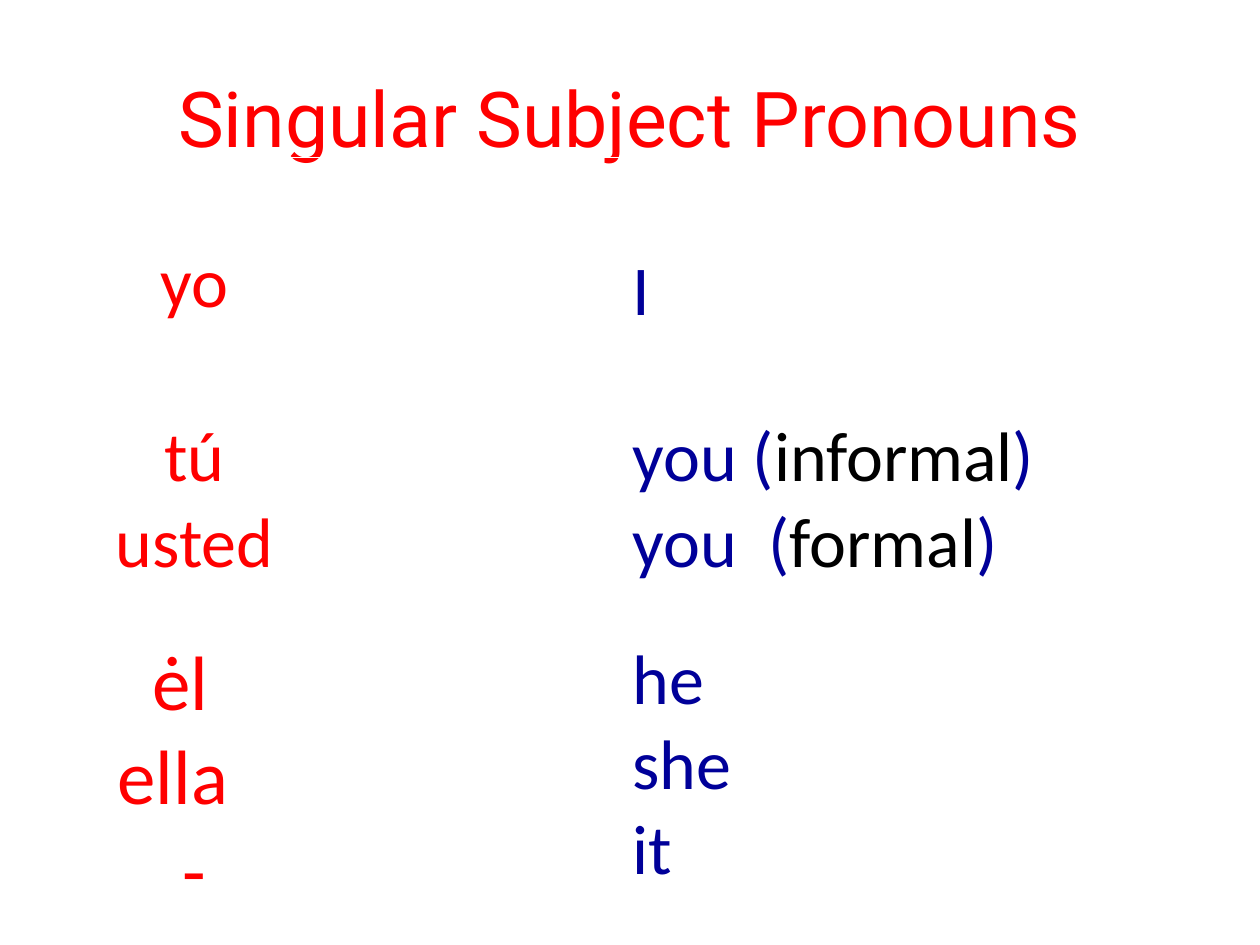
from pptx import Presentation
from pptx.dml.color import RGBColor
from pptx.enum.text import MSO_ANCHOR, PP_ALIGN
from pptx.util import Pt

RED = RGBColor(0xFF, 0x00, 0x00)
BLUE = RGBColor(0x00, 0x00, 0x99)
BLACK = RGBColor(0x00, 0x00, 0x00)

CENTER, LEFT = PP_ALIGN.CENTER, PP_ALIGN.LEFT

prs = Presentation()
prs.slide_width, prs.slide_height = Pt(720), Pt(540)
s = prs.slides.add_slide(prs.slide_layouts[5])

title = s.shapes.title
title.left, title.top, title.width, title.height = Pt(36), Pt(21.6), Pt(648), Pt(90)
tf = title.text_frame
tf.text = "Singular Subject Pronouns"
tf.vertical_anchor = MSO_ANCHOR.MIDDLE
p = tf.paragraphs[0]
p.alignment = CENTER
p.font.size = Pt(44)
p.font.name = "Roboto"
p.font.color.rgb = RED

COLUMN_WIDTHS = [162, 162, 306, 18]
ROW_HEIGHTS = [121.7, 149, 211.7]
table = s.shapes.add_table(3, 4, Pt(30.24), Pt(90), Pt(648), Pt(482.4)).table
table.first_row = table.horz_banding = False
for column, width in zip(table.columns, COLUMN_WIDTHS):
    column.width = Pt(width)
for row, height in zip(table.rows, ROW_HEIGHTS):
    row.height = Pt(height)
for cell in table.iter_cells():
    cell.fill.background()

# (row, column, top margin, size, colour, lines);
# a line is (alignment, left indent, runs), and every second run is black
CELLS = [
    (0, 0, 47.6, 40, RED, [(CENTER, 0, ["yo"])]),
    (0, 2, 52.4, 40, BLUE, [(LEFT, 0, ["I"])]),
    (1, 0, 25.6, 40, RED, [(CENTER, 0, ["tú"]), (CENTER, 0, ["usted"])]),
    (1, 2, 25.6, 40, BLUE, [(LEFT, 0, ["you (", "informal", ")"]),
                            (LEFT, 0, ["you  (", "formal", ")"])]),
    (2, 0, 3.6, 44, RED, [(LEFT, 49.7, ["ėl"]), (LEFT, 29.8, ["ella"]),
                          (CENTER, 0, ["-"])]),
    (2, 2, 3.6, 40, BLUE, [(LEFT, 0, ["he"]), (LEFT, 0, ["she"]),
                           (LEFT, 0, ["it"])]),
]
for row, col, top, size, color, lines in CELLS:
    cell = table.cell(row, col)
    cell.margin_top = Pt(top)
    tf = cell.text_frame
    for i, (align, indent, texts) in enumerate(lines):
        p = tf.add_paragraph() if i else tf.paragraphs[0]
        p.alignment = align
        p.font.size = Pt(size)
        p.font.name = "Calibri"
        if indent:
            p._p.get_or_add_pPr().set("marL", str(Pt(indent)))
        for j, text in enumerate(texts):
            r = p.add_run()
            r.text = text
            r.font.color.rgb = BLACK if j % 2 else color

prs.save("out.pptx")
